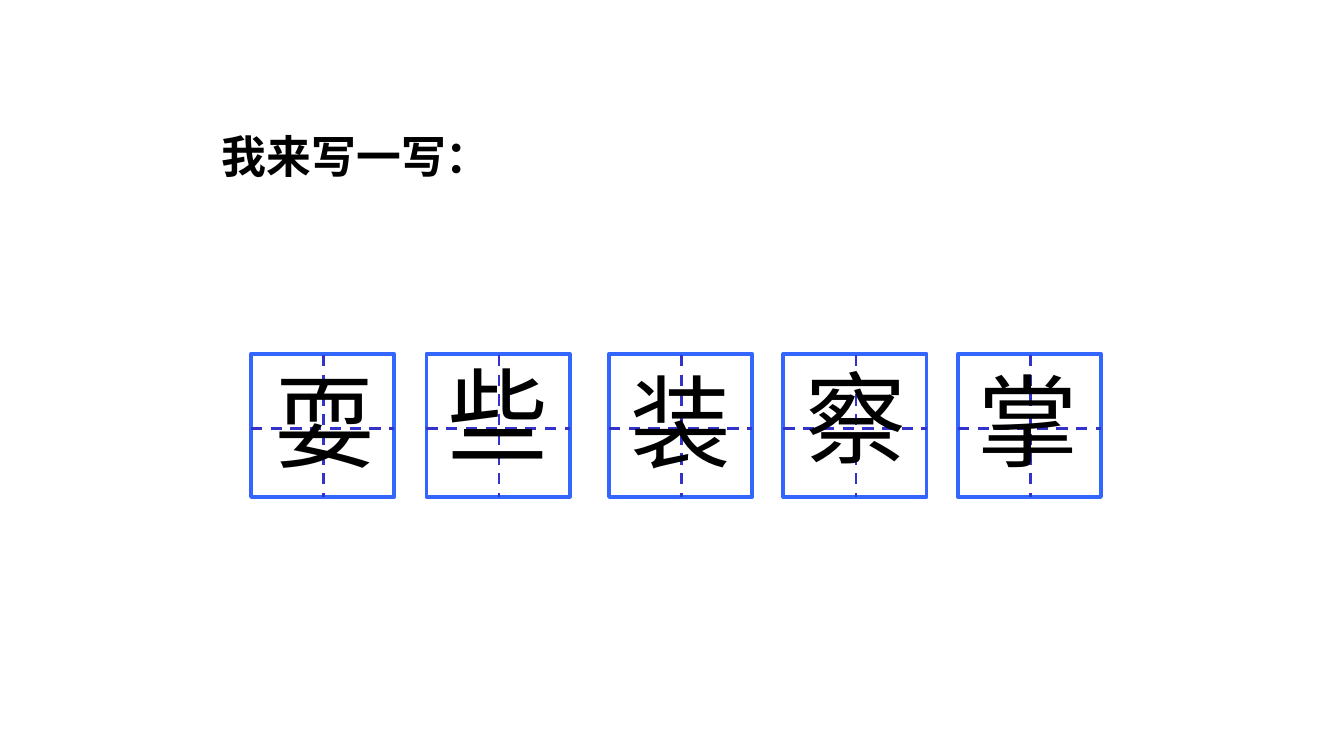
from pptx import Presentation
from pptx.dml.color import RGBColor
from pptx.enum.dml import MSO_LINE
from pptx.enum.shapes import MSO_CONNECTOR, MSO_SHAPE
from pptx.enum.text import MSO_ANCHOR
from pptx.oxml.ns import qn
from pptx.util import Pt
from lxml import etree

PX = 9144  # 100 px to the inch
BLACK = RGBColor(0x00, 0x00, 0x00)
FRAME_BLUE = RGBColor(0x33, 0x66, 0xFF)
GUIDE_BLUE = RGBColor(0x33, 0x33, 0xCC)
RECT = MSO_SHAPE.RECTANGLE
STRAIGHT = MSO_CONNECTOR.STRAIGHT
DASH = MSO_LINE.DASH
TOP = MSO_ANCHOR.TOP

HEADING = {"name": "Times New Roman", "size": Pt(32), "bold": True}
CHARACTER = {"name": "Times New Roman", "size": Pt(72), "bold": False}
CELL, CELL_TOP = 142, 351
# character, left of its cell, left and top of its text
CELLS = [
    ("耍", 249, 262, 352),
    ("些", 423, 434, 345),
    ("装", 604, 616, 352),
    ("察", 777, 789, 348),
    ("掌", 950, 960, 351),
]


def px(*lengths):
    return [length * PX for length in lengths]


def write(sp, text, font):
    tf = sp.text_frame
    tf.word_wrap = True
    tf.vertical_anchor = TOP
    p = tf.paragraphs[0]
    pPr = p._p.get_or_add_pPr()
    pPr.set("marL", str(38 * PX))
    pPr.set("indent", str(-38 * PX))
    etree.SubElement(pPr, qn("a:buNone"))
    r = p.add_run()
    r.text = text
    for name, value in font.items():
        setattr(r.font, name, value)
    r.font.color.rgb = BLACK


def add_heading(slide, text, x, y, w, h):
    sp = slide.placeholders[1]
    sp.left, sp.top, sp.width, sp.height = px(x, y, w, h)
    write(sp, text, HEADING)


def add_guide(group, x1, y1, x2, y2):
    line = group.shapes.add_connector(STRAIGHT, *px(x1, y1, x2, y2))
    line.line.color.rgb = GUIDE_BLUE
    line.line.width = Pt(2)
    line.line.dash_style = DASH
    etree.SubElement(line._element.spPr, qn("a:effectLst"))


def add_practice_cell(slide, x, y, size):
    """Draw a square frame with dashed horizontal and vertical guides."""
    group = slide.shapes.add_group_shape()
    frame = group.shapes.add_shape(RECT, *px(x, y, size, size))
    frame.shadow.inherit = False
    frame.fill.background()
    frame.line.color.rgb = FRAME_BLUE
    frame.line.width = Pt(2.75)
    add_guide(group, x, y + 74, x + size, y + 74)
    add_guide(group, x + 72, y + 1, x + 72, y + size)


def add_character(slide, text, x, y):
    sp = slide.shapes.add_textbox(*px(x, y, 150, 192))
    write(sp, text, CHARACTER)


def main():
    prs = Presentation()
    prs.slide_width, prs.slide_height = px(1333, 750)
    slide = prs.slides.add_slide(prs.slide_layouts[1])
    title = slide.shapes.title._element
    title.getparent().remove(title)
    add_heading(slide, "我来写一写：", 210, 123, 331, 192)
    for _, x, _, _ in CELLS:
        add_practice_cell(slide, x, CELL_TOP, CELL)
    for text, _, x, y in CELLS:
        add_character(slide, text, x, y)
    prs.save("out.pptx")


if __name__ == "__main__":
    main()
